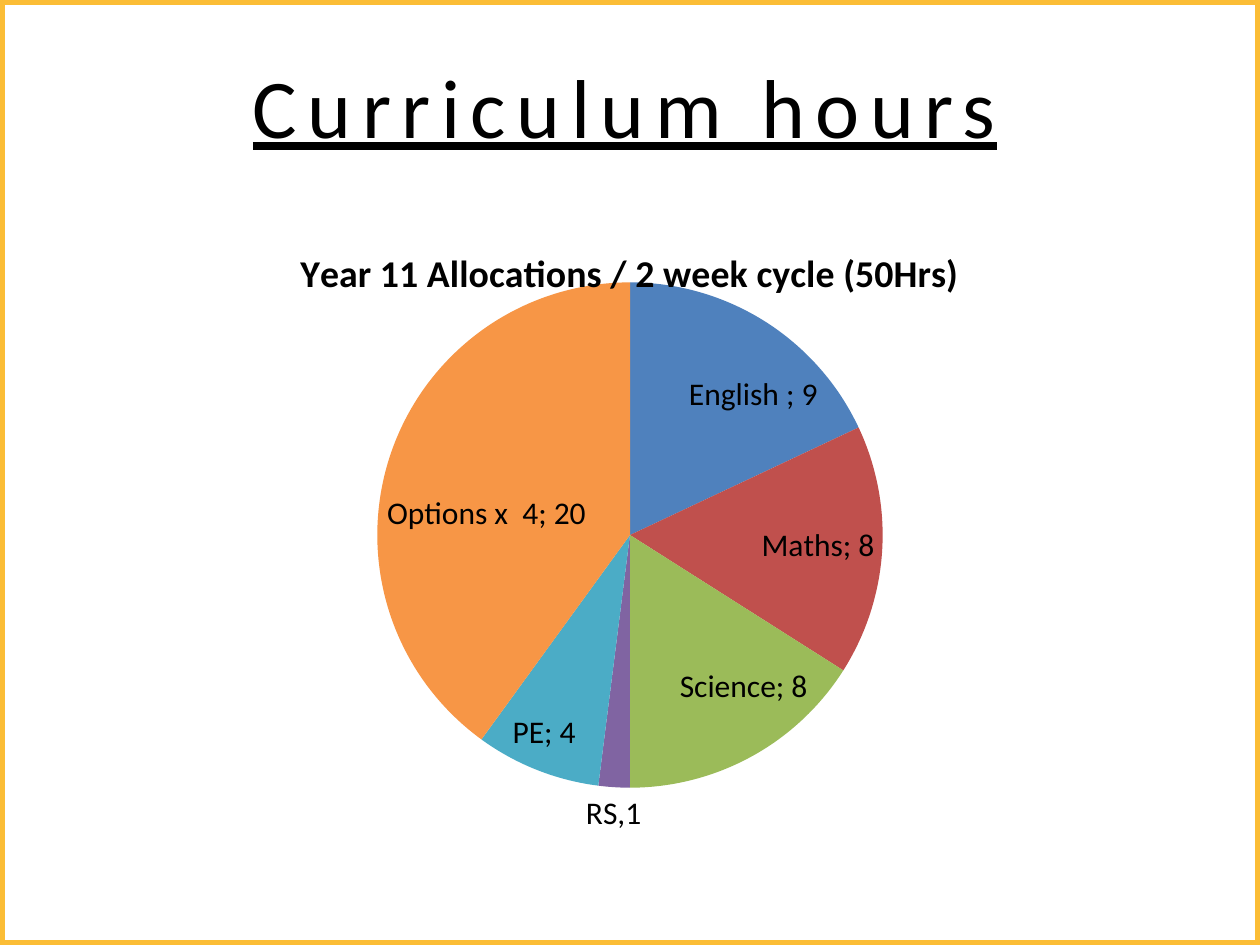
import pptx
import pptx.util
import pptx.chart.data
import pptx.dml.color
import pptx.enum.chart
import pptx.enum.shapes
import pptx.enum.text
import pptx.oxml
import pptx.oxml.ns

SCALE = 914400 // 126
HUES = {
    "ink": "000000",
    "frame": "FBBD36",
    "English ": "4F81BD",
    "Maths": "C0504D",
    "Science": "9BBB59",
    "RS": "8064A2",
    "PE": "4BACC6",
    "Options x  4": "F79646",
}
HOURS = {
    "English ": 9,
    "Maths": 8,
    "Science": 8,
    "RS": 1,
    "PE": 4,
    "Options x  4": 20,
}
PLOT = {"x": 0.08, "y": 0.1, "w": 0.84, "h": 0.81}


def px(n):
    return pptx.util.Emu(n * SCALE)


def hue(name):
    return pptx.dml.color.RGBColor.from_string(HUES[name])


def style(font, size, bold=False, line=False):
    font.name = "Calibri"
    font.size = pptx.util.Pt(size)
    font.bold = bold
    font.underline = line
    font.color.rgb = hue("ink")


def write(frame, text, size, bold=False, line=False, gap=0):
    para = frame.paragraphs[0]
    para.alignment = pptx.enum.text.PP_ALIGN.CENTER
    run = para.add_run()
    run.text = text
    style(run.font, size, bold, line)
    if gap:
        run.font._element.set("spc", str(gap * 100))


def add_title(slide, text):
    shape = slide.shapes.title
    shape.left, shape.top, shape.width, shape.height = map(px, (63, 68, 1134, 157))
    frame = shape.text_frame
    frame.word_wrap = True
    frame.auto_size = pptx.enum.text.MSO_AUTO_SIZE.NONE
    frame.vertical_anchor = pptx.enum.text.MSO_ANCHOR.MIDDLE
    frame.margin_right = px(23)
    frame.margin_bottom = px(90)
    write(frame, text, 47.7, line=True, gap=6)


def add_frame(slide):
    kind = pptx.enum.shapes.MSO_SHAPE.RECTANGLE
    shape = slide.shapes.add_shape(kind, 0, 0, px(1260), px(945))
    shape.shadow.inherit = False
    shape.fill.background()
    shape.line.color.rgb = hue("frame")
    shape.line.width = pptx.util.Pt(6)


def place_plot(chart):
    area = chart._chartSpace.chart.plotArea
    for old in area.findall(pptx.oxml.ns.qn("c:layout")):
        area.remove(old)
    sides = "".join(f'<c:{key}Mode val="edge"/>' for key in "xy")
    sides += "".join(f'<c:{key} val="{val}"/>' for key, val in PLOT.items())
    area.insert(0, pptx.oxml.parse_xml(
        f'<c:layout {pptx.oxml.ns.nsdecls("c")}><c:manualLayout>'
        f'<c:layoutTarget val="inner"/>{sides}</c:manualLayout></c:layout>'))


def add_pie(slide):
    data = pptx.chart.data.CategoryChartData()
    data.categories = list(HOURS)
    data.add_series("Series 1", list(HOURS.values()))
    kind = pptx.enum.chart.XL_CHART_TYPE.PIE
    chart = slide.shapes.add_chart(kind, *map(px, (63, 220, 1134, 624)), data).chart
    style(chart.font, 18)
    chart.has_legend = False
    chart.has_title = True
    head = chart.chart_title
    write(head.text_frame, "Year 11 Allocations / 2 week cycle (50Hrs)", 21.6, bold=True)
    head._element.find(pptx.oxml.ns.qn("c:overlay")).set("val", "1")
    place_plot(chart)
    chart.plots[0].vary_by_categories = True
    series = chart.plots[0].series[0]
    for i, name in enumerate(HOURS):
        fill = series.points[i].format.fill
        fill.solid()
        fill.fore_color.rgb = hue(name)
    spot = pptx.enum.chart.XL_LABEL_POSITION
    labels = series.data_labels
    labels.show_value = True
    labels.show_category_name = True
    labels.position = spot.BEST_FIT
    style(labels.font, 18)
    label = series.points[3].data_label
    write(label.text_frame, "RS,1", 18)
    label.position = spot.OUTSIDE_END


def main():
    deck = pptx.Presentation()
    deck.slide_width, deck.slide_height = px(1260), px(945)
    slide = deck.slides.add_slide(deck.slide_layouts[5])
    add_title(slide, "Curriculum hours")
    add_frame(slide)
    add_pie(slide)
    deck.save("out.pptx")


if __name__ == "__main__":
    main()
